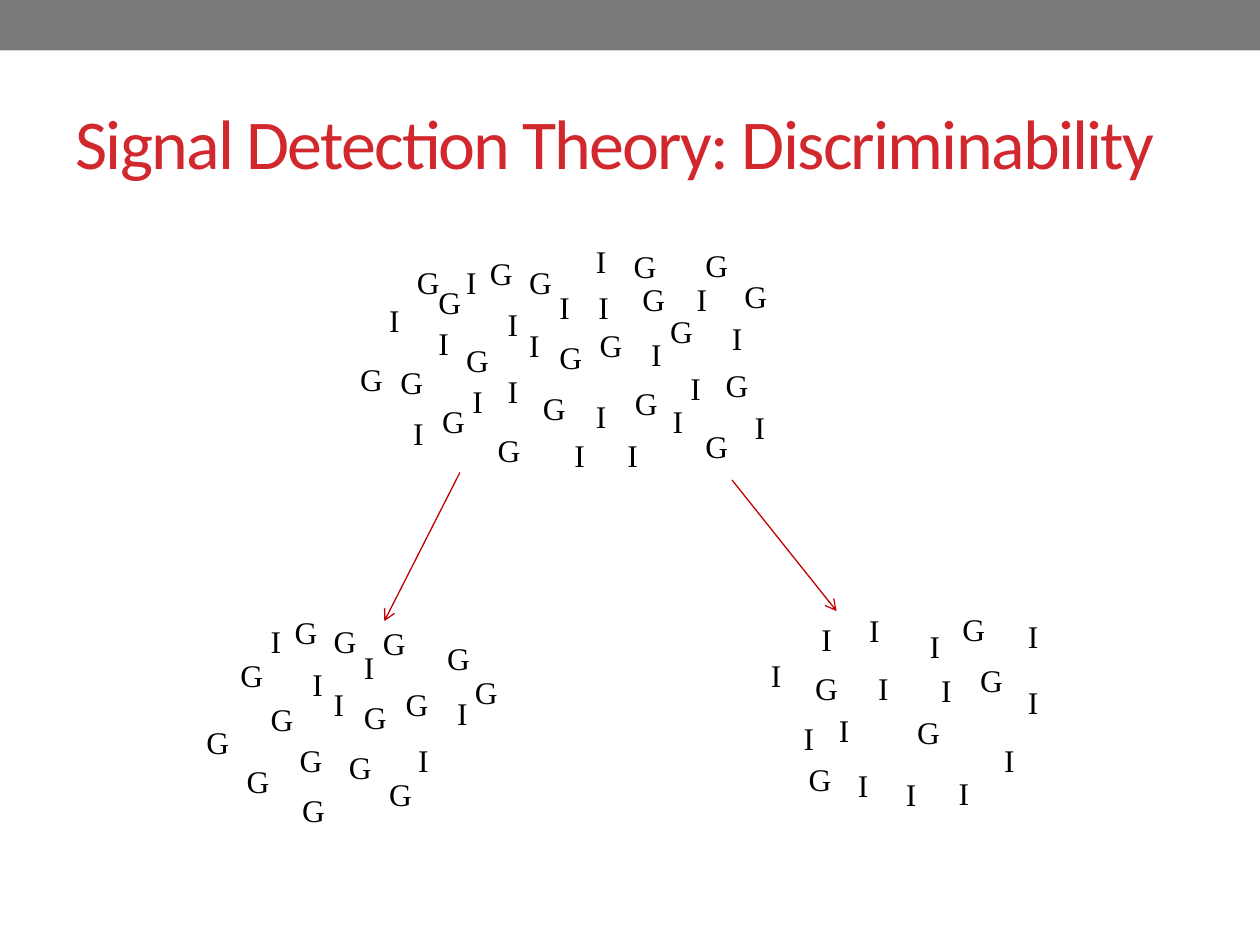
from lxml.etree import SubElement
from pptx import Presentation
from pptx.dml.color import RGBColor
from pptx.enum.shapes import MSO_CONNECTOR, MSO_SHAPE
from pptx.enum.text import MSO_ANCHOR, MSO_AUTO_SIZE
from pptx.oxml.ns import qn
from pptx.util import Inches, Pt

# All places are (column, row) on a grid of 1000 by 750 cells over the slide.
COLS, ROWS = 1000, 750
TITLE = "Signal Detection Theory: Discriminability"
CLOUDS = {
    "mixed": {
        "I": [(360, 204), (338, 252), (393, 237), (410, 254), (434, 224),
              (299, 234), (507, 261), (393, 290), (463, 187), (463, 310),
              (589, 319), (524, 314), (365, 298), (543, 217), (488, 341),
              (571, 248), (318, 324), (538, 288), (446, 341), (465, 224)],
        "G": [(321, 204), (338, 220), (500, 217), (410, 204), (379, 197),
              (360, 266), (421, 304), (308, 283), (466, 254), (434, 263),
              (341, 314), (522, 243), (581, 215), (550, 190), (276, 281),
              (550, 334), (385, 337), (494, 300), (566, 286), (493, 191)],
    },
    "mostly G": {
        "I": [(205, 489), (238, 523), (255, 539), (279, 509), (353, 546),
              (322, 583)],
        "G": [(181, 516), (294, 490), (345, 502), (255, 489), (224, 482),
              (205, 551), (267, 589), (154, 569), (312, 539), (279, 549),
              (186, 600), (367, 529), (228, 583), (230, 623), (299, 610)],
    },
    "mostly I": {
        "I": [(687, 526), (602, 516), (656, 559), (737, 528), (642, 487),
              (680, 480), (787, 583), (628, 566), (806, 485), (751, 609),
              (806, 537), (671, 603), (709, 610), (728, 493)],
        "G": [(637, 526), (632, 598), (718, 561), (768, 520), (754, 479)],
    },
}
ARROWS = [((365, 375), (305, 493)), ((581, 381), (664, 485))]
SIZES = {"I": (29, 40), "G": (38, 40)}
THEME = {
    "bar": "7A7A7A", "title": "D1282E", "letter": "000000", "arrow": "C00000",
    "head": "Calibri", "body": "Times New Roman",
    "big": 40, "small": 18, "thin": 0.75,
}

deck = Presentation()
deck.slide_width, deck.slide_height = Inches(10), Inches(7.5)
slide = deck.slides.add_slide(deck.slide_layouts[6])


def place(*cells):
    """Turn alternating column and row counts into slide lengths."""
    units = (deck.slide_width / COLS, deck.slide_height / ROWS)
    return [round(n * units[i % 2]) for i, n in enumerate(cells)]


def color(name):
    return RGBColor.from_string(THEME[name])


def write(text, at, *, font, size, ink, wrap=False, space=0,
          anchor=MSO_ANCHOR.TOP, fit=MSO_AUTO_SIZE.NONE):
    box = slide.shapes.add_textbox(*place(*at))
    frame = box.text_frame
    frame.word_wrap, frame.auto_size = wrap, fit
    frame.vertical_anchor = anchor
    run = frame.paragraphs[0].add_run()
    run.text = text
    run.font.name, run.font.size = THEME[font], Pt(THEME[size])
    run.font.color.rgb = color(ink)
    if space:
        run._r.get_or_add_rPr().set("spc", str(space * 100))


def point(start, end):
    """Draw a thin line with an open arrowhead at its end."""
    line = slide.shapes.add_connector(
        MSO_CONNECTOR.STRAIGHT, *place(*start, *end))
    line.line.color.rgb = color("arrow")
    line.line.width = Pt(THEME["thin"])
    SubElement(line.line._get_or_add_ln(), qn("a:tailEnd"), type="arrow")
    SubElement(line._element.spPr, qn("a:effectLst"))


bar = slide.shapes.add_shape(MSO_SHAPE.RECTANGLE, *place(0, 0, COLS, 40))
bar.shadow.inherit = False
bar.fill.solid()
bar.fill.fore_color.rgb = color("bar")
bar.line.fill.background()

write(TITLE, (50, 58, 900, 108), font="head", size="big", ink="title",
      wrap=True, space=-1, anchor=MSO_ANCHOR.MIDDLE)

for cloud in CLOUDS.values():
    for letter, spots in cloud.items():
        for spot in spots:
            write(letter, (*spot, *SIZES[letter]), font="body", size="small",
                  ink="letter", fit=MSO_AUTO_SIZE.SHAPE_TO_FIT_TEXT)

for start, end in ARROWS:
    point(start, end)

deck.save("out.pptx")
